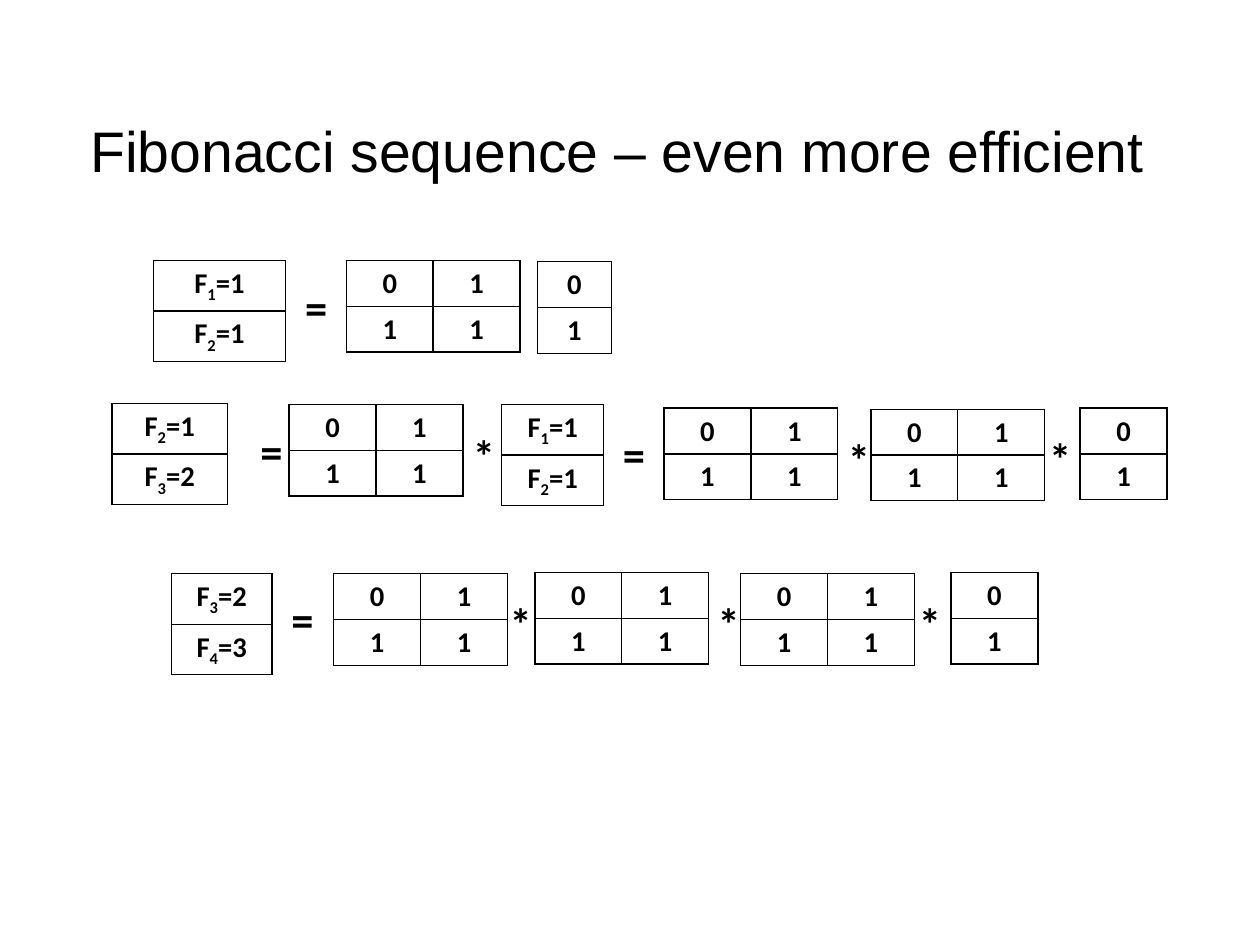
import pptx
import pptx.util
import pptx.dml.color
import pptx.enum.text
import pptx.oxml

Inches = pptx.util.Inches
Pt = pptx.util.Pt
NS = "http://schemas.openxmlformats.org/drawingml/2006/main"


def color(code):
    return pptx.dml.color.RGBColor.from_string(code)


class Board:
    ink = "000000"
    body = "Calibri"
    head = "Arial"

    def __init__(self, slide):
        self.slide = slide

    def style(self, run, size, name, bold):
        font = run.font
        font.size, font.name, font.bold = Pt(size), name, bold
        font.color.rgb = color(self.ink)

    def title(self, text, x, y, w, h):
        frame = self.slide.shapes.add_textbox(
            Inches(x), Inches(y), Inches(w), Inches(h)).text_frame
        frame.word_wrap = True
        frame.margin_left = frame.margin_right = 0
        frame.margin_top = frame.margin_bottom = 0
        frame.vertical_anchor = pptx.enum.text.MSO_ANCHOR.MIDDLE
        frame.text = text
        self.style(frame.paragraphs[0].runs[0], 36, self.head, False)

    def sign(self, text, x, y):
        width = 0.49 if text == "=" else 0.4
        frame = self.slide.shapes.add_textbox(
            Inches(x), Inches(y), Inches(width), Inches(0.57)).text_frame
        frame.word_wrap = False
        frame.auto_size = pptx.enum.text.MSO_AUTO_SIZE.SHAPE_TO_FIT_TEXT
        frame.text = text
        self.style(frame.paragraphs[0].runs[0], 28, self.body, True)

    def border(self, cell):
        props = cell._tc.get_or_add_tcPr()
        for side in "LRTB":
            props.append(pptx.oxml.parse_xml(
                f'<a:ln{side} xmlns:a="{NS}" w="12700"><a:solidFill>'
                f'<a:srgbClr val="{self.ink}"/></a:solidFill></a:ln{side}>'))

    def cell(self, cell, text):
        self.border(cell)
        cell.fill.background()
        para = cell.text_frame.paragraphs[0]
        para.alignment = pptx.enum.text.PP_ALIGN.CENTER
        # An underscore marks the next character as a subscript
        base, _, rest = text.partition("_")
        for i, part in enumerate((base, rest[:1], rest[1:])):
            if part:
                run = para.add_run()
                run.text = part
                self.style(run, 18, self.body, True)
                if i == 1:
                    run._r.get_or_add_rPr().set("baseline", "-25000")

    def matrix(self, rows, x, y, width):
        table = self.slide.shapes.add_table(
            len(rows), len(rows[0]), Inches(x), Inches(y),
            Inches(width), Inches(0.36 * len(rows))).table
        table.first_row = table.horz_banding = False
        for r, row in enumerate(rows):
            for c, text in enumerate(row):
                self.cell(table.cell(r, c), text)


def main():
    # A 28 by 21 cm page
    deck = pptx.Presentation()
    deck.slide_width, deck.slide_height = Inches(28 / 2.54), Inches(21 / 2.54)
    board = Board(deck.slides.add_slide(deck.slide_layouts[6]))
    board.title("Fibonacci sequence – even more efficient",
                0.79, 0.75, 9.25, 1.12)

    # Step matrices
    for x, y in ((3.03, 2.28), (2.53, 3.54), (5.81, 3.57), (7.62, 3.58),
                 (2.92, 5.02), (4.68, 5.01), (6.48, 5.02)):
        board.matrix(("01", "11"), x, y, 1.52)

    # Start vectors
    for x, y, width in ((4.7, 2.29, 0.65), (9.45, 3.57, 0.76),
                        (8.32, 5.01, 0.76)):
        board.matrix(("0", "1"), x, y, width)

    # Pairs of neighbouring Fibonacci numbers
    fib = {1: 1, 2: 1, 3: 2, 4: 3}
    for n, x, y, width in ((1, 1.34, 2.28, 1.16), (2, 0.98, 3.53, 1.01),
                           (1, 4.39, 3.54, 0.89), (3, 1.5, 5.02, 0.88)):
        pair = [[f"F_{k}={fib[k]}"] for k in (n, n + 1)]
        board.matrix(pair, x, y, width)

    # Operators
    signs = {
        "=": ((2.57, 2.4), (2.18, 3.66), (5.35, 3.69), (2.45, 5.13)),
        "*": ((4.04, 3.7), (7.32, 3.73), (9.08, 3.72),
              (4.36, 5.17), (6.18, 5.17), (7.94, 5.17)),
    }
    for text, spots in signs.items():
        for x, y in spots:
            board.sign(text, x, y)

    deck.save("out.pptx")


if __name__ == "__main__":
    main()
